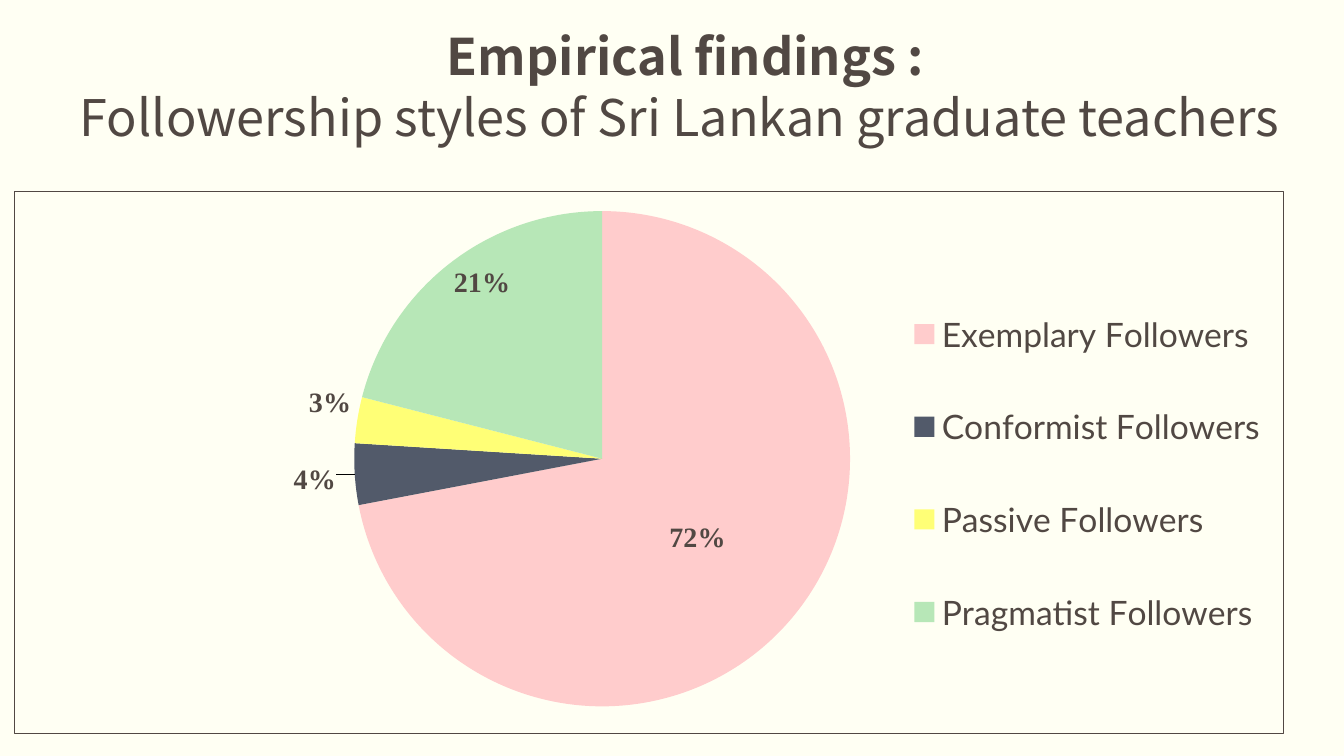
import lxml.etree
import pptx
import pptx.chart.data
import pptx.dml.color
import pptx.enum.chart
import pptx.enum.text
import pptx.oxml
import pptx.oxml.ns
import pptx.util

CREAM = pptx.dml.color.RGBColor(0xFF, 0xFF, 0xF3)
BROWN = pptx.dml.color.RGBColor(0x51, 0x48, 0x43)
PINK = pptx.dml.color.RGBColor(0xFF, 0xCC, 0xCC)
SLATE = pptx.dml.color.RGBColor(0x52, 0x5A, 0x6A)
YELLOW = pptx.dml.color.RGBColor(0xFF, 0xFF, 0x76)
GREEN = pptx.dml.color.RGBColor(0xB7, 0xE7, 0xB7)

POSITION = pptx.enum.chart.XL_LABEL_POSITION
FOLLOWERS = [
    ("Exemplary Followers", 72, PINK, POSITION.CENTER),
    ("Conformist Followers", 4, SLATE, POSITION.OUTSIDE_END),
    ("Passive Followers", 3, YELLOW, POSITION.OUTSIDE_END),
    ("Pragmatist Followers", 21, GREEN, POSITION.INSIDE_END),
]


class SlideBuilder:
    """Hold the style and the current slide, and place elements by shares of its size."""

    title_format = {"size": pptx.util.Pt(36), "name": "Noto Sans CJK KR"}
    chart_format = {"size": pptx.util.Pt(10), "name": "Lato"}
    legend_format = {"size": pptx.util.Pt(24), "name": "Lato"}
    label_format = {"size": pptx.util.Pt(20), "name": "Times New Roman", "bold": True}

    def __init__(self, presentation):
        self.width = presentation.slide_width
        self.height = presentation.slide_height
        self.slide = presentation.slides.add_slide(presentation.slide_layouts[6])
        self.slide.background.fill.solid()
        self.slide.background.fill.fore_color.rgb = CREAM

    def box(self, left, top, width, height):
        return (int(left * self.width), int(top * self.height),
                int(width * self.width), int(height * self.height))

    def style(self, font, values):
        for name, value in values.items():
            setattr(font, name, value)
        font.color.rgb = BROWN

    def layout(self, values, inner=False):
        target = '<c:layoutTarget val="inner"/>' if inner else ""
        modes = "".join(f'<c:{side}Mode val="edge"/>' for side in values if side in "xy" and "w" in values)
        sizes = "".join(f'<c:{side} val="{value}"/>' for side, value in values.items())
        return pptx.oxml.parse_xml(
            f'<c:layout {pptx.oxml.ns.nsdecls("c")}><c:manualLayout>'
            f'{target}{modes}{sizes}</c:manualLayout></c:layout>')

    def title(self, place, lines):
        frame = self.slide.shapes.add_textbox(*self.box(*place)).text_frame
        frame.word_wrap = True
        for index, (text, bold) in enumerate(lines):
            paragraph = frame.add_paragraph() if index else frame.paragraphs[0]
            paragraph.alignment = pptx.enum.text.PP_ALIGN.CENTER
            run = paragraph.add_run()
            run.text = text
            self.style(run.font, {**self.title_format, "bold": bold})

    def pie(self, place, slices):
        data = pptx.chart.data.CategoryChartData()
        data.categories = [name for name, *_ in slices]
        data.add_series("Series 1", [value for _, value, *_ in slices])
        chart = self.slide.shapes.add_chart(
            pptx.enum.chart.XL_CHART_TYPE.PIE, *self.box(*place), data).chart
        chart.has_title = False
        self.style(chart.font, self.chart_format)
        chart.plots[0].vary_by_categories = True
        series = chart.plots[0].series[0]
        labels = series.data_labels
        labels.show_percentage, labels.show_value = True, False
        self.style(labels.font, self.label_format)
        for index, (_, _, color, position) in enumerate(slices):
            point = series.points[index]
            point.format.fill.solid()
            point.format.fill.fore_color.rgb = color
            self.style(point.data_label.font, self.label_format)
            point.data_label.position = position
        self.legend(chart)
        self.arrange(chart)

    def legend(self, chart):
        chart.has_legend = True
        chart.legend.position = pptx.enum.chart.XL_LEGEND_POSITION.RIGHT
        chart.legend.include_in_layout = False
        self.style(chart.legend.font, self.legend_format)

    def arrange(self, chart):
        space = chart.element if hasattr(chart, "element") else chart._chartSpace
        for label in space.xpath(".//c:dLbl"):
            label.xpath("c:showVal")[0].set("val", "0")
            label.xpath("c:showPercent")[0].set("val", "1")
        conformist = space.xpath(".//c:dLbl[c:idx/@val='1']")[0]
        conformist.insert(1, self.layout({"x": -0.01, "y": 0.01}))
        for old in space.xpath(".//c:plotArea/c:layout | .//c:legend/c:layout"):
            old.getparent().remove(old)
        space.xpath(".//c:plotArea")[0].insert(
            0, self.layout({"x": 0.192, "y": 0.036, "w": 0.542, "h": 0.915}, inner=True))
        space.xpath(".//c:legendPos")[0].addnext(
            self.layout({"x": 0.7, "y": 0.13, "w": 0.29, "h": 0.78}))
        space.xpath("c:chart")[0].addnext(pptx.oxml.parse_xml(
            f'<c:spPr {pptx.oxml.ns.nsdecls("c", "a")}><a:noFill/><a:ln w="{pptx.util.Pt(0.5)}">'
            f'<a:solidFill><a:srgbClr val="{BROWN}"/></a:solidFill></a:ln></c:spPr>'))


def main():
    presentation = pptx.Presentation()
    presentation.slide_width = pptx.util.Inches(13.33)
    presentation.slide_height = pptx.util.Inches(7.5)
    builder = SlideBuilder(presentation)
    builder.title((0.027, 0.027, 0.966, 0.175), [
        ("Empirical findings :", True),
        ("Followership styles of Sri Lankan graduate teachers ", False)])
    builder.pie((0.0105, 0.253, 0.945, 0.717), FOLLOWERS)
    presentation.save("out.pptx")


if __name__ == "__main__":
    main()
